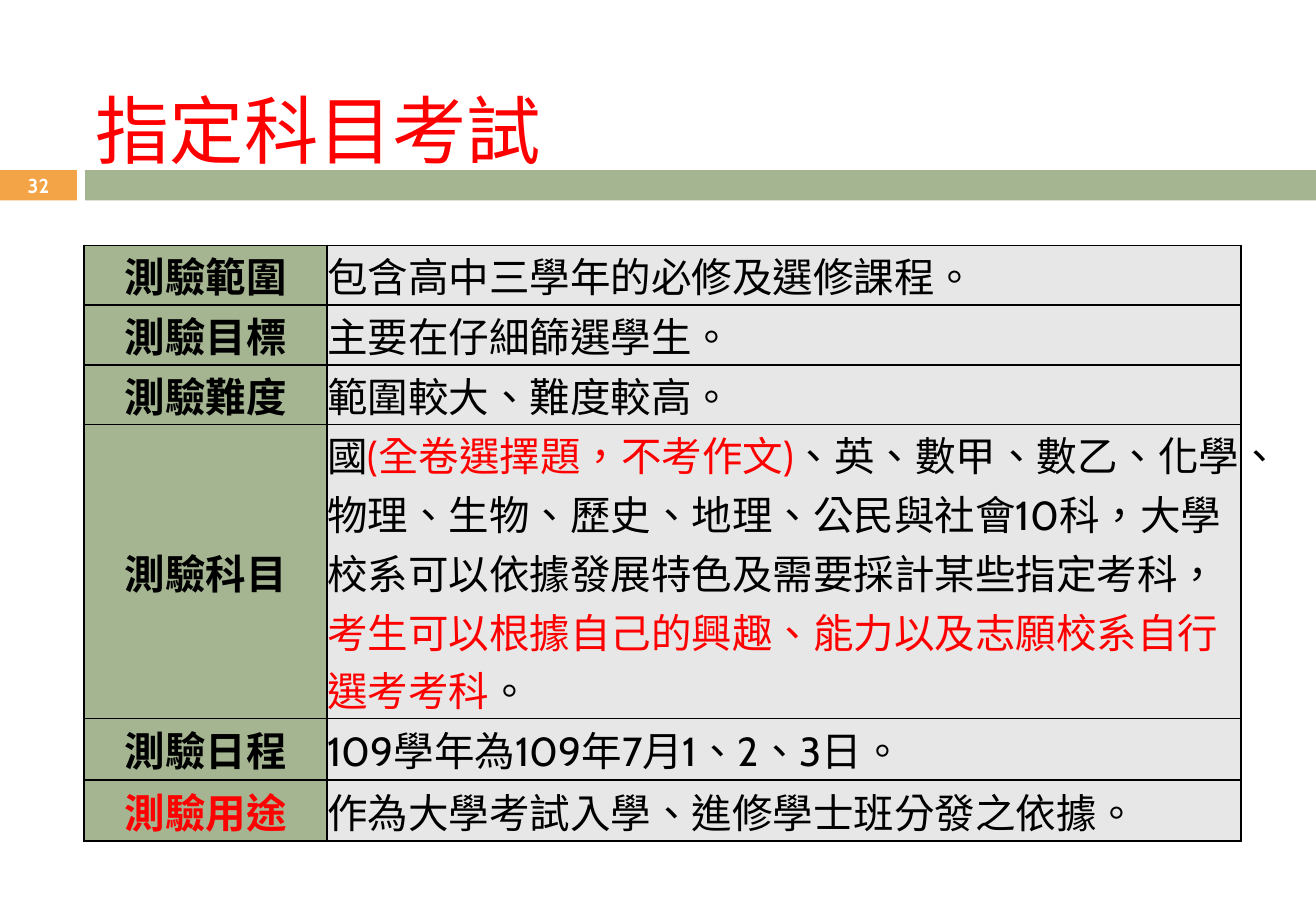
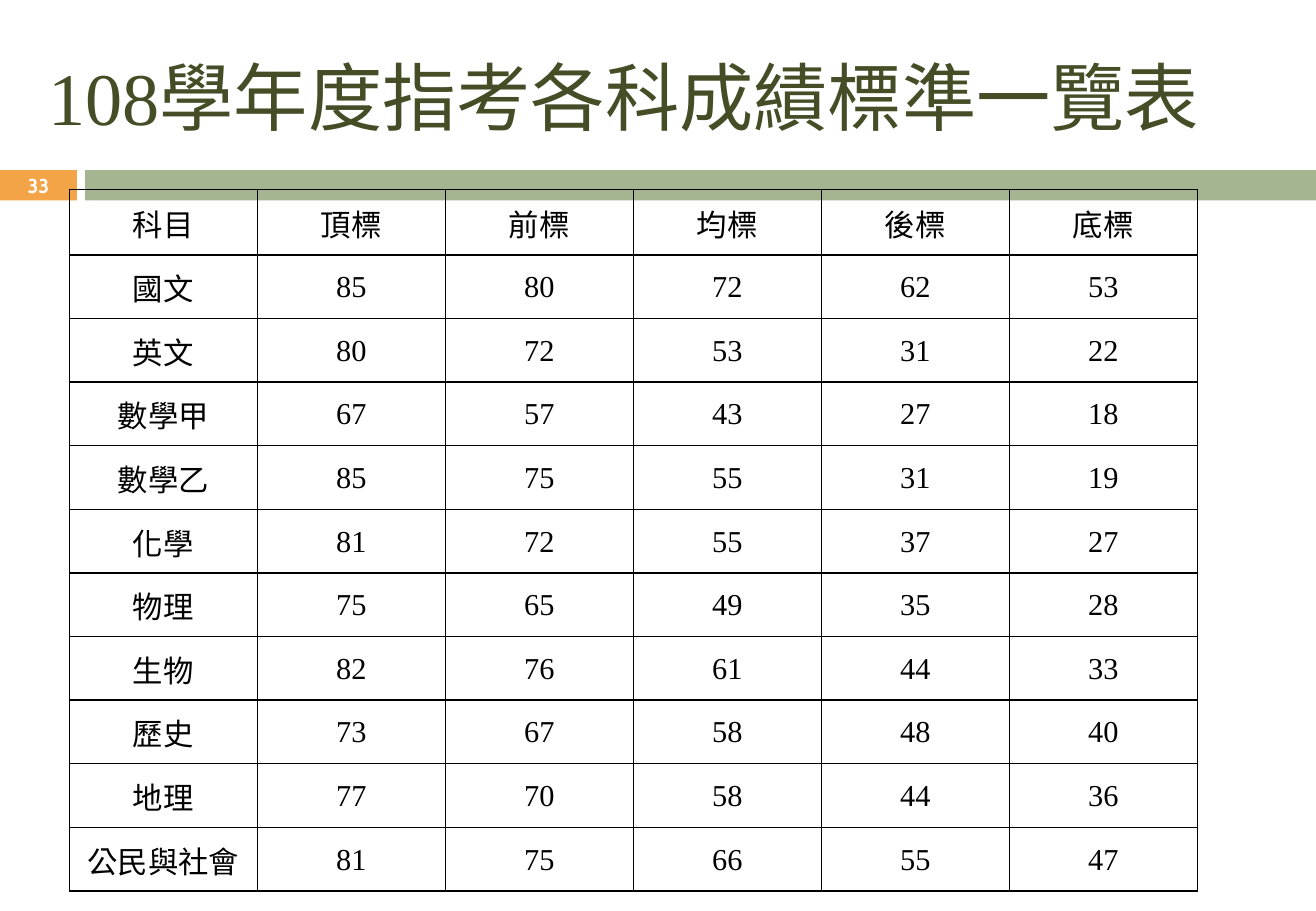
from dataclasses import dataclass
from typing import Optional

from lxml import etree
from pptx import Presentation
from pptx.dml.color import RGBColor
from pptx.enum import shapes, text
from pptx.oxml import ns
from pptx.util import Cm, Pt

BLACK = RGBColor(0x00, 0x00, 0x00)
WHITE = RGBColor(0xFF, 0xFF, 0xFF)
RED = RGBColor(0xFF, 0x00, 0x00)
GREEN = RGBColor(0xA5, 0xB5, 0x92)
OLIVE = RGBColor(0x44, 0x4D, 0x26)
ORANGE = RGBColor(0xF3, 0xA4, 0x47)
GREY = RGBColor(0xE7, 0xE7, 0xE7)

ARIAL, CABIN = "Arial", "Cabin"
SERIF, HAN = "Times New Roman", "Noto Sans CJK SC"

MID, LEFT = text.PP_ALIGN.CENTER, text.PP_ALIGN.LEFT
WIDE, HIGH = 27.51, 19.05
BAND_TOP, BAND_H = 3.56, 0.63
TAB_W, BAND_X = 1.61, 1.78


@dataclass(frozen=True)
class Box:
    x: float
    y: float
    w: float
    h: float

    def cm(self) -> tuple:
        return Cm(self.x), Cm(self.y), Cm(self.w), Cm(self.h)


@dataclass(frozen=True)
class Style:
    size: float
    face: str
    color: RGBColor
    bold: bool = False
    align: int = LEFT


@dataclass(frozen=True)
class Piece:
    """Words that may differ from their paragraph in colour or face."""
    words: str
    color: Optional[RGBColor] = None
    face: Optional[str] = None


@dataclass(frozen=True)
class Cell:
    pieces: tuple
    style: Style
    fill: Optional[RGBColor] = None


@dataclass(frozen=True)
class Grid:
    x: float
    y: float
    cols: list
    rows: list
    pad: float


TITLE = Style(44, ARIAL, RED)
TITLE_2 = Style(44, HAN, OLIVE)
PAGE = Style(11.9, CABIN, WHITE, True, MID)
HEAD = Style(24, CABIN, BLACK, True, MID)
BODY = Style(24, CABIN, BLACK)
LABEL = Style(18, HAN, BLACK, False, MID)
SCORE = Style(18, SERIF, BLACK, False, MID)

# (ending of the heading, its colour, body)
FACTS = [
    ("範圍", BLACK, [Piece("包含高中三學年的必修及選修課程。")]),
    ("目標", BLACK, [Piece("主要在仔細篩選學生。")]),
    ("難度", BLACK, [Piece("範圍較大、難度較高。")]),
    ("科目", BLACK, [
        Piece("國"),
        Piece("(全卷選擇題，不考作文)", RED),
        Piece("、英、數甲、數乙、化學、物理、生物、歷史、地理、公民與社會10科，"
              "大學校系可以依據發展特色及需要採計某些指定考科，"),
        Piece("考生可以根據自己的興趣、能力以及志願校系自行選考考科", RED),
        Piece("。"),
    ]),
    ("日程", BLACK, [Piece("109學年為109年7月1、2、3日。")]),
    ("用途", RED, [Piece("作為大學考試入學、進修學士班分發之依據。")]),
]

MARKS = [
    ("科目", "頂標", "前標", "均標", "後標", "底標"),
    ("國文", 85, 80, 72, 62, 53),
    ("英文", 80, 72, 53, 31, 22),
    ("數學甲", 67, 57, 43, 27, 18),
    ("數學乙", 85, 75, 55, 31, 19),
    ("化學", 81, 72, 55, 37, 27),
    ("物理", 75, 65, 49, 35, 28),
    ("生物", 82, 76, 61, 44, 33),
    ("歷史", 73, 67, 58, 48, 40),
    ("地理", 77, 70, 58, 44, 36),
    ("公民與社會", 81, 75, 66, 55, 47),
]


def set_face(font, face: str) -> None:
    """Set the Latin face, and the Han face used beside it."""
    font.name = face
    etree.SubElement(font._element, ns.qn("a:ea"), typeface=HAN)


def write(frame, pieces, style: Style) -> None:
    para = frame.paragraphs[0]
    para.alignment = style.align
    font = para.font
    set_face(font, style.face)
    font.size, font.bold = Pt(style.size), style.bold
    font.color.rgb = style.color
    for piece in pieces:
        run = para.add_run()
        run.text = piece.words
        # Traditional Chinese centres its punctuation marks
        run.font._element.set("lang", "zh-TW")
        if piece.face:
            set_face(run.font, piece.face)
        if piece.color is not None:
            run.font.color.rgb = piece.color


def add_text(slide, box: Box, pieces, style: Style) -> None:
    frame = slide.shapes.add_textbox(*box.cm()).text_frame
    frame.word_wrap = True
    frame.margin_top = frame.margin_bottom = 0
    frame.vertical_anchor = text.MSO_ANCHOR.MIDDLE
    write(frame, pieces, style)


def add_band(slide, x: float, w: float, color: RGBColor) -> None:
    box = Box(x, BAND_TOP, w, BAND_H)
    band = slide.shapes.add_shape(shapes.MSO_SHAPE.RECTANGLE, *box.cm())
    band.shadow.inherit = False
    band.fill.solid()
    band.fill.fore_color.rgb = color
    band.line.fill.background()


def add_edges(cell) -> None:
    """Rule all four sides of a cell in black."""
    props = cell._tc.get_or_add_tcPr()
    for spot, side in enumerate(("lnL", "lnR", "lnT", "lnB")):
        edge = etree.Element(ns.qn(f"a:{side}"), w=str(Pt(1)))
        fill = etree.SubElement(edge, ns.qn("a:solidFill"))
        etree.SubElement(fill, ns.qn("a:srgbClr"), val=str(BLACK))
        props.insert(spot, edge)


def add_grid(slide, grid: Grid, cells: list) -> None:
    box = Box(grid.x, grid.y, sum(grid.cols), sum(grid.rows))
    table = slide.shapes.add_table(
        len(grid.rows), len(grid.cols), *box.cm()).table
    table.first_row = table.horz_banding = False
    for col, width in zip(table.columns, grid.cols):
        col.width = Cm(width)
    for row, height, line in zip(table.rows, grid.rows, cells):
        row.height = Cm(height)
        for cell, item in zip(row.cells, line):
            cell.margin_left = cell.margin_right = Cm(grid.pad)
            cell.margin_top, cell.margin_bottom = Cm(grid.pad), 0
            cell.vertical_anchor = text.MSO_ANCHOR.MIDDLE
            if item.fill is None:
                cell.fill.background()
            else:
                cell.fill.solid()
                cell.fill.fore_color.rgb = item.fill
            add_edges(cell)
            write(cell.text_frame, item.pieces, item.style)


def add_page(deck, number: int, box: Box, title, style: Style):
    """Add a slide with its bands, page number and title."""
    slide = deck.slides.add_slide(deck.slide_layouts[6])
    add_band(slide, 0, TAB_W, ORANGE)
    add_band(slide, BAND_X, WIDE - BAND_X, GREEN)
    add_text(slide, box, title, style)
    add_text(slide, Box(0, BAND_TOP, TAB_W, BAND_H),
             [Piece(str(number))], PAGE)
    return slide


def add_facts(deck) -> None:
    slide = add_page(deck, 32, Box(1.75, 1.32, 9.92, 2.74),
                     [Piece("指定科目考試")], TITLE)
    cells = []
    for end, color, body in FACTS:
        head = (Piece("測驗", color, ARIAL), Piece(end, color))
        cells.append((Cell(head, HEAD, GREEN),
                      Cell(tuple(body), BODY, GREY)))
    rows = [1.25] * 3 + [6.15] + [1.28] * 2
    add_grid(slide, Grid(1.76, 5.13, [5.08, 19.1], rows, 0), cells)


def add_marks(deck) -> None:
    title = [Piece("108", face=SERIF), Piece("學年度指考各科成績標準一覽表")]
    slide = add_page(deck, 33, Box(0.76, 0.64, 25.63, 2.74), title, TITLE_2)
    cells = [[Cell((Piece(str(mark)),),
                   SCORE if isinstance(mark, int) else LABEL)
              for mark in line] for line in MARKS]
    rows = [1.37] + [1.33] * (len(MARKS) - 1)
    add_grid(slide, Grid(1.45, 3.96, [3.93] * 6, rows, 0.03), cells)


def main() -> None:
    deck = Presentation()
    deck.slide_width, deck.slide_height = Cm(WIDE), Cm(HIGH)
    add_facts(deck)
    add_marks(deck)
    deck.save("out.pptx")


if __name__ == "__main__":
    main()
